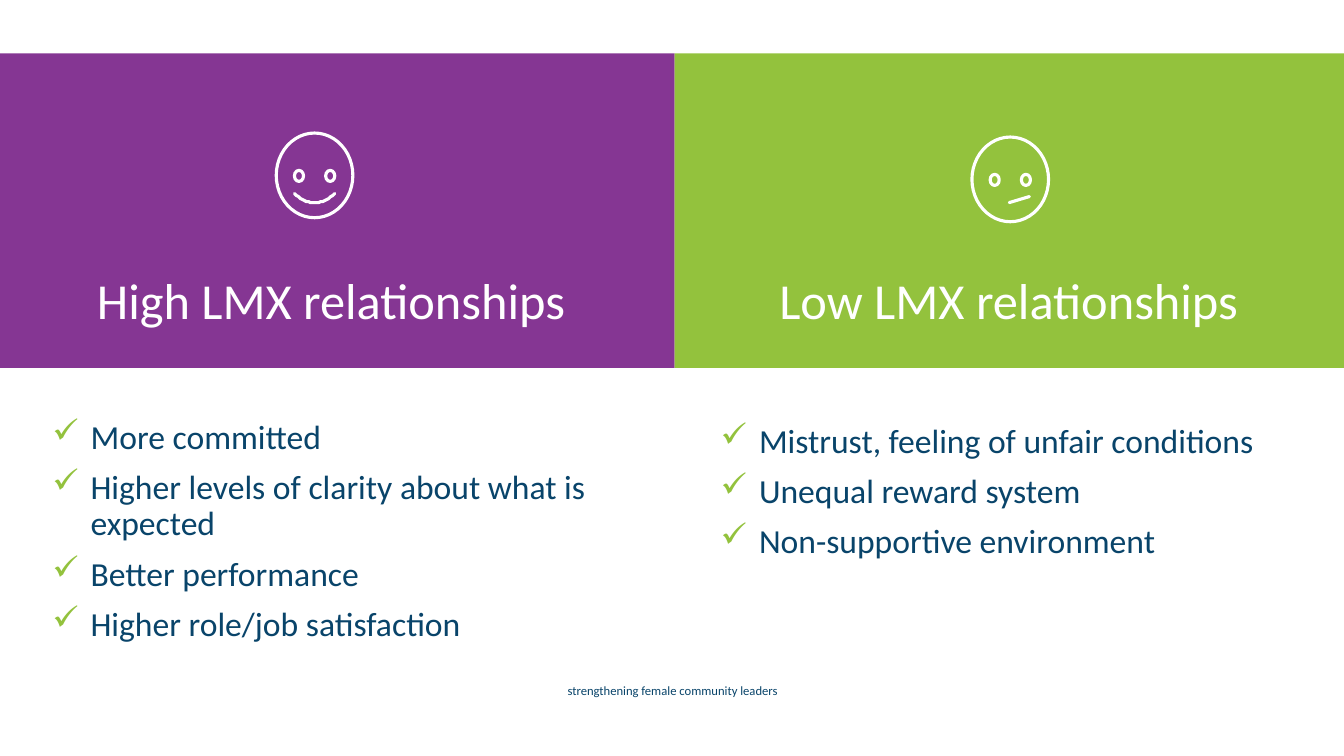
import pptx
import pptx.util
import pptx.dml.color
import pptx.enum.shapes
import pptx.enum.text
import pptx.oxml.ns
from lxml import etree

PX = 9144
PURPLE = pptx.dml.color.RGBColor(0x85, 0x36, 0x93)
GREEN = pptx.dml.color.RGBColor(0x93, 0xC2, 0x3D)
NAVY = pptx.dml.color.RGBColor(0x09, 0x44, 0x6A)
WHITE = pptx.dml.color.RGBColor(0xFF, 0xFF, 0xFF)
SHAPE = pptx.enum.shapes.MSO_SHAPE
CENTER = pptx.enum.text.PP_ALIGN.CENTER
FACE = (76, 84)
EYE = (9, 11)


def scale(*nums):
    return [round(num * PX) for num in nums]


def add_node(parent, tag, **attrs):
    return etree.SubElement(parent, pptx.oxml.ns.qn(tag), **attrs)


def add_panel(slide, left, color):
    panel = slide.shapes.add_shape(SHAPE.RECTANGLE, *scale(left, 53, 669, 312))
    panel.shadow.inherit = False
    panel.fill.solid()
    panel.fill.fore_color.rgb = color
    panel.line.fill.background()


def add_text(slide, box, lines, size, color, space, align=None, tick=False):
    frame = slide.shapes.add_textbox(*scale(*box)).text_frame
    frame.word_wrap = True
    frame.text = "\n".join(lines)
    for num, para in enumerate(frame.paragraphs):
        if tick:
            add_tick(para)
        para.alignment = align
        para.line_spacing = space
        if num:
            para.space_before = pptx.util.Pt(10)
        for run in para.runs:
            run.font.name = "Calibri"
            run.font.size = pptx.util.Pt(size)
            run.font.color.rgb = color


def add_tick(para):
    props = para._p.get_or_add_pPr()
    props.set("marL", str(38 * PX))
    props.set("indent", str(-38 * PX))
    add_node(add_node(props, "a:buClr"), "a:srgbClr", val=str(GREEN))
    add_node(props, "a:buChar", char="✓")


def set_line(shape):
    shape.line.color.rgb = WHITE
    shape.line.width = pptx.util.Pt(2.25)
    shape.line._get_or_add_ln().set("cap", "rnd")


def add_oval(group, left, top, size):
    oval = group.shapes.add_shape(SHAPE.OVAL, *scale(left, top, *size))
    oval.shadow.inherit = False
    oval.fill.background()
    set_line(oval)


def add_head(slide, left, top):
    group = slide.shapes.add_group_shape()
    add_oval(group, left, top, FACE)
    for shift in (18, 49):
        add_oval(group, left + shift, top + 37, EYE)
    return group


def add_smile(group, left, top):
    points = [(left + 38 + step, top + 69 - 9 * (step / 20) ** 2)
              for step in range(-20, 21, 2)]
    pen = group.shapes.build_freeform(*points[0], scale=PX)
    pen.add_line_segments(points[1:], close=False)
    smile = pen.convert_to_shape()
    smile.shadow.inherit = False
    smile.fill.background()
    set_line(smile)


def add_smirk(group, left, top):
    smirk = group.shapes.add_connector(
        pptx.enum.shapes.MSO_CONNECTOR.STRAIGHT,
        *scale(left + 37, top + 65, left + 57, top + 59))
    set_line(smirk)
    add_node(smirk._element.spPr, "a:effectLst")


def main():
    deck = pptx.Presentation()
    deck.slide_width, deck.slide_height = scale(1333, 750)
    slide = deck.slides.add_slide(deck.slide_layouts[6])
    add_panel(slide, 0, PURPLE)
    add_panel(slide, 669, GREEN)
    add_text(slide, (1, 673, 1332, 25),
             ["strengthening female community leaders"], 9, NAVY, 1, CENTER)
    add_text(slide, (0, 274, 657, 64),
             ["High LMX relationships"], 36, WHITE, 0.8, CENTER)
    add_text(slide, (667, 274, 667, 64),
             ["Low LMX relationships"], 36, WHITE, 0.8, CENTER)
    add_text(slide, (42, 412, 615, 297), [
        "More committed",
        "Higher levels of clarity about what is expected",
        "Better performance",
        "Higher role/job satisfaction",
    ], 24, NAVY, 0.9, tick=True)
    add_text(slide, (705, 416, 587, 184), [
        "Mistrust, feeling of unfair conditions",
        "Unequal reward system",
        "Non-supportive environment",
    ], 24, NAVY, 0.9, tick=True)
    add_smile(add_head(slide, 274, 132), 274, 132)
    add_smirk(add_head(slide, 964, 136), 964, 136)
    deck.save("out.pptx")


if __name__ == "__main__":
    main()
